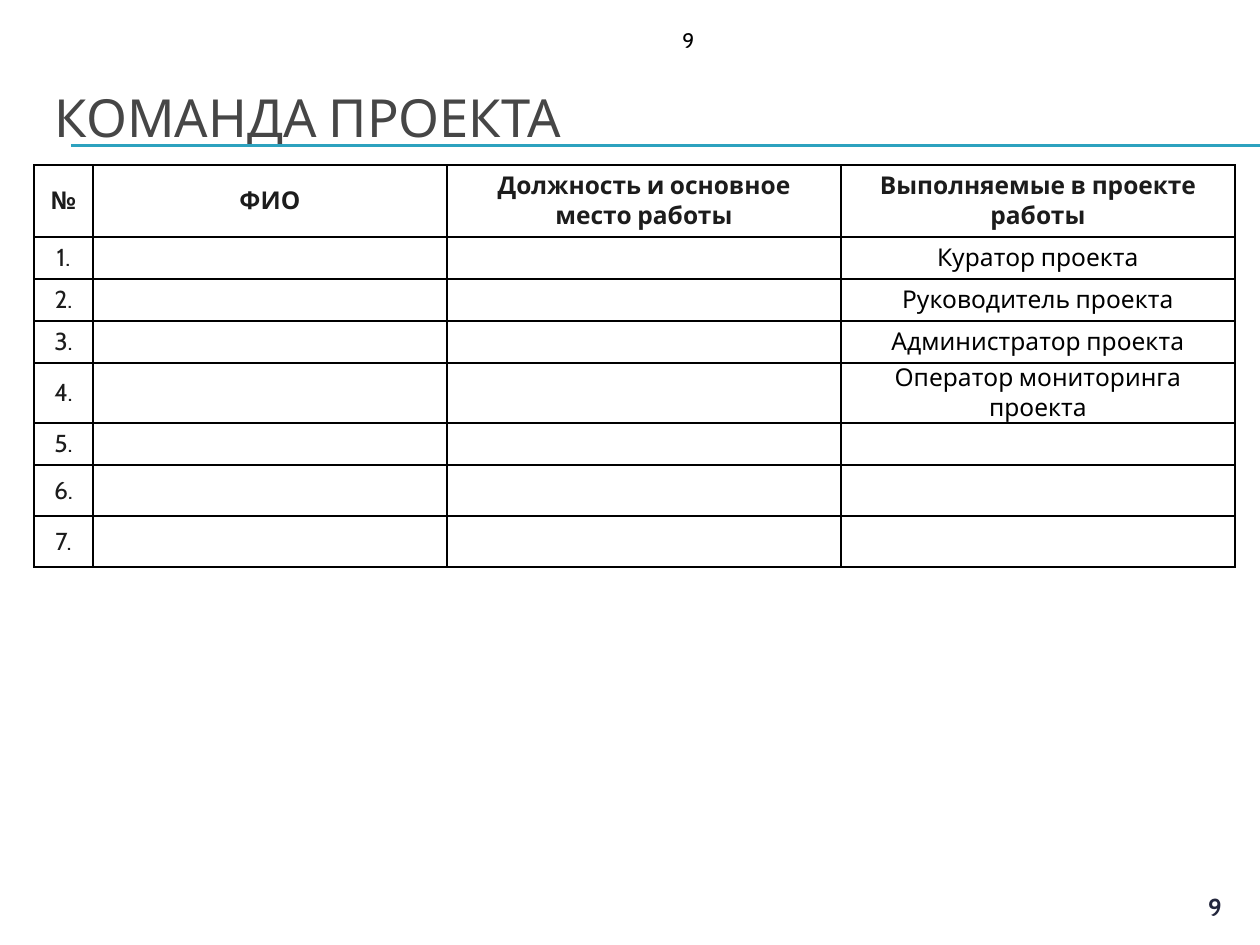
from dataclasses import dataclass

from lxml.etree import SubElement
from pptx import Presentation
from pptx.dml.color import RGBColor as Rgb
from pptx.enum.shapes import MSO_CONNECTOR as Connector
from pptx.enum.text import MSO_ANCHOR as Anchor, MSO_AUTO_SIZE as AutoSize, PP_ALIGN as Align
from pptx.oxml.ns import qn
from pptx.util import Emu, Pt


@dataclass(frozen=True)
class Theme:
    font: str = "Cabin"
    title: str = "464646"
    heading: str = "1C1C1C"
    text: str = "000000"
    accent: str = "2DA2BF"
    page_number: str = "23263C"
    title_size: int = 30
    body_size: int = 14
    small_size: int = 12
    rule_width: float = 0.75
    border_width: float = 1


def px(length):
    return Emu(round(length * 914400 / 126))


class PageBuilder:
    def __init__(self, deck, theme):
        self.theme = theme
        self.page = deck.slides.add_slide(deck.slide_layouts[5])

    def style(self, para, size, color, bold=False, align=Align.LEFT):
        para.alignment = align
        font = para.font
        font.name, font.size, font.bold = self.theme.font, Pt(size), bold
        font.color.rgb = Rgb.from_string(color)

    def rule(self, left, right, y):
        line = self.page.shapes.add_connector(Connector.STRAIGHT, px(left), px(y), px(right), px(y))
        line.line.color.rgb = Rgb.from_string(self.theme.accent)
        line.line.width = Pt(self.theme.rule_width)
        SubElement(line._element.spPr, qn("a:effectLst"))

    def title(self, text, left, top, width, height):
        box = self.page.shapes.title
        box.left, box.top, box.width, box.height = map(px, (left, top, width, height))
        frame = box.text_frame
        frame.text = text
        frame.auto_size = AutoSize.NONE
        frame.vertical_anchor = Anchor.MIDDLE
        self.style(frame.paragraphs[0], self.theme.title_size, self.theme.title)

    def label(self, text, left, top, width, height, wrap=True, **look):
        box = self.page.shapes.add_textbox(*map(px, (left, top, width, height)))
        frame = box.text_frame
        frame.word_wrap = wrap
        frame.text = text
        self.style(frame.paragraphs[0], **look)

    def borders(self, cell):
        properties = cell._tc.get_or_add_tcPr()
        for index, side in enumerate(("lnL", "lnR", "lnT", "lnB")):
            border = properties.makeelement(qn(f"a:{side}"), {"w": str(Pt(self.theme.border_width))})
            fill = SubElement(border, qn("a:solidFill"))
            SubElement(fill, qn("a:srgbClr"), val=self.theme.text)
            properties.insert(index, border)

    def cell(self, cell, text, color, bold, margins):
        cell.text = text
        cell.vertical_anchor = Anchor.MIDDLE
        across, down = map(px, margins)
        cell.margin_left = cell.margin_right = across
        cell.margin_top = cell.margin_bottom = down
        cell.fill.background()
        self.borders(cell)
        self.style(cell.text_frame.paragraphs[0], self.theme.body_size, color, bold, Align.CENTER)

    def table(self, rows, left, top, widths, heights):
        frame = self.page.shapes.add_table(
            len(rows), len(widths), px(left), px(top), px(sum(widths)), px(sum(heights)))
        table = frame.table
        table.first_row = table.horz_banding = False
        for column, width in zip(table.columns, widths):
            column.width = px(width)
        for row, height in zip(table.rows, heights):
            row.height = px(height)
        for r, values in enumerate(rows):
            for c, value in enumerate(values):
                heading = r == 0 or c == 0
                color = self.theme.heading if heading else self.theme.text
                margins = (13, 6) if heading else (9, 0)
                self.cell(table.cell(r, c), value, color, r == 0, margins)


def main():
    theme = Theme()
    deck = Presentation()
    deck.slide_width, deck.slide_height = px(1260), px(945)
    builder = PageBuilder(deck, theme)

    for y in (145, 146):
        builder.rule(71, 1260, y)
    builder.title("КОМАНДА ПРОЕКТА", 42, 59, 1197, 116)

    headings = ["№", "ФИО", "Должность и основное место работы", "Выполняемые в проекте работы"]
    duties = ["Куратор проекта", "Руководитель проекта", "Администратор проекта",
              "Оператор мониторинга проекта", "", "", ""]
    members = [[f"{number}.", "", "", duty] for number, duty in enumerate(duties, 1)]
    builder.table([headings] + members, 34, 165,
                  widths=[59, 354, 394, 394],
                  heights=[72, 42, 42, 42, 60, 42, 51, 51])

    builder.label("9", 670, 21, 38, 38, wrap=False, size=theme.small_size, color=theme.text)
    builder.label("9", 1191, 886, 48, 39, size=theme.body_size, color=theme.page_number,
                  bold=True, align=Align.CENTER)
    deck.save("out.pptx")


if __name__ == "__main__":
    main()
